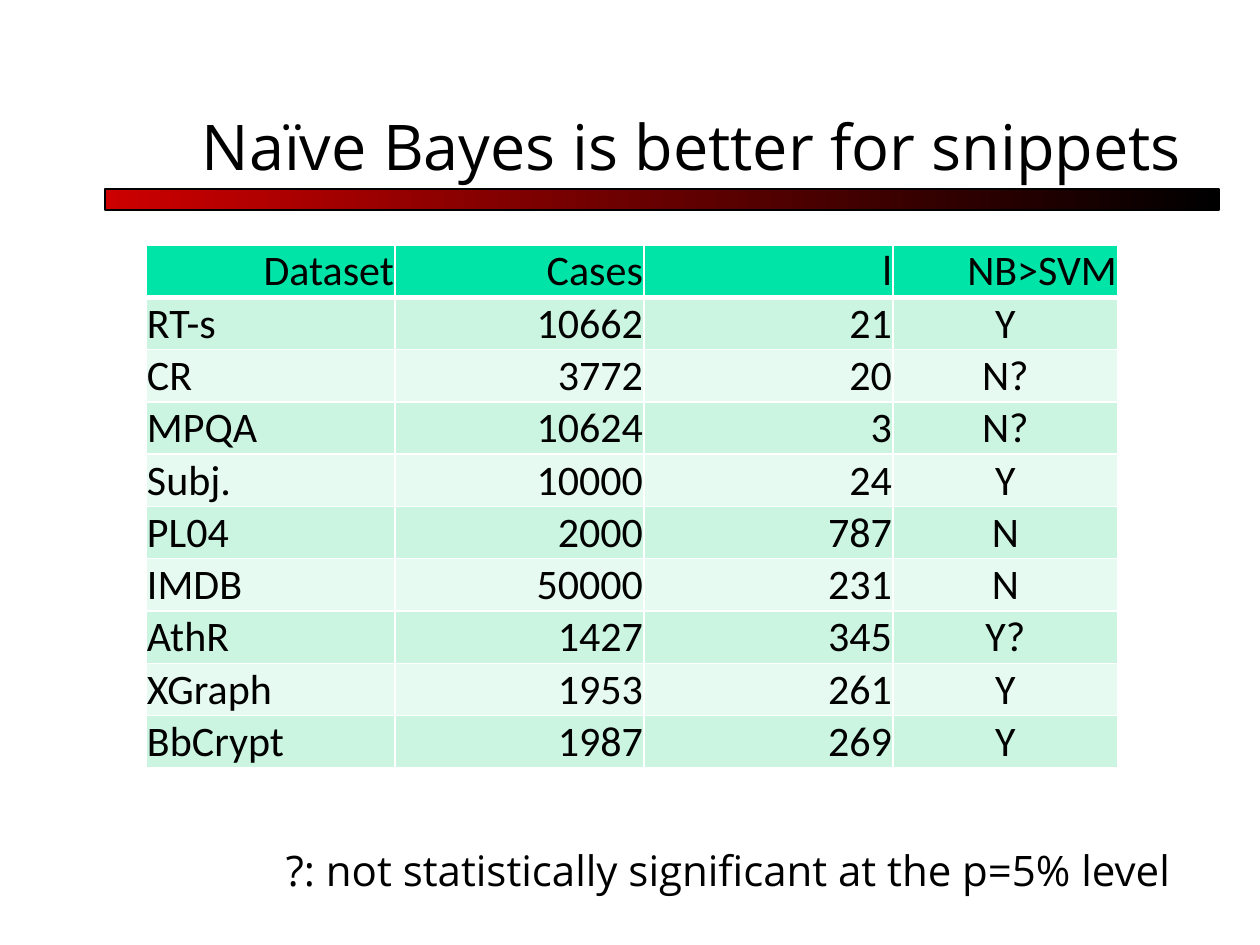
"""Build the slide comparing Naïve Bayes and SVM by dataset."""
from dataclasses import dataclass

from lxml.etree import SubElement
from pptx import Presentation
from pptx.dml.color import RGBColor
from pptx.enum.shapes import MSO_SHAPE
from pptx.enum.text import MSO_ANCHOR, MSO_AUTO_SIZE, PP_ALIGN
from pptx.oxml.ns import qn
from pptx.util import Emu, Pt

EMU_PER_PX = 914400 / 126
SLIDE_SIZE = (1260, 945)

HEADER = ("Dataset", "Cases", "l", "NB>SVM")
RESULTS = (
    ("RT-s", 10662, 21, "Y"),
    ("CR", 3772, 20, "N?"),
    ("MPQA", 10624, 3, "N?"),
    ("Subj.", 10000, 24, "Y"),
    ("PL04", 2000, 787, "N"),
    ("IMDB", 50000, 231, "N"),
    ("AthR", 1427, 345, "Y?"),
    ("XGraph", 1953, 261, "Y"),
    ("BbCrypt", 1987, 269, "Y"),
)
HEADER_ALIGNS = (PP_ALIGN.RIGHT,) * 4
RESULT_ALIGNS = (PP_ALIGN.LEFT, PP_ALIGN.RIGHT, PP_ALIGN.RIGHT, PP_ALIGN.CENTER)


@dataclass(frozen=True)
class Theme:
    ink: str = "000000"
    bar_start: str = "CC0000"
    header: str = "00E4A8"
    bands: tuple = ("CCF5E1", "E7FAF1")
    rule: str = "FFFFFF"
    rule_width: int = 1
    header_rule_width: int = 3
    title_size: int = 36
    body_size: int = 24
    heading_font: str = "Open Sans"
    table_font: str = "Calibri"


def px(length):
    return Emu(round(length * EMU_PER_PX))


def rgb(color):
    return RGBColor.from_string(color)


class SlideBuilder:
    def __init__(self, slide, theme):
        self.slide = slide
        self.theme = theme

    def set_text(self, frame, text, size, font, align):
        frame.text = text
        paragraph = frame.paragraphs[0]
        paragraph.alignment = align
        run_font = paragraph.runs[0].font
        run_font.size = Pt(size)
        run_font.name = font
        run_font.bold = False
        run_font.color.rgb = rgb(self.theme.ink)

    def bar(self, left, top, width, height):
        bar = self.slide.shapes.add_shape(
            MSO_SHAPE.RECTANGLE, px(left), px(top), px(width), px(height))
        bar.shadow.inherit = False
        bar.fill.gradient()
        bar.fill.gradient_angle = 0
        for stop, color in zip(bar.fill.gradient_stops, (self.theme.bar_start, self.theme.ink)):
            stop.color.rgb = rgb(color)
        bar.line.color.rgb = rgb(self.theme.ink)
        bar.line.width = Pt(0.75)

    def title(self, text, left, top, width, height):
        title = self.slide.shapes.title
        title.left, title.top, title.width, title.height = map(px, (left, top, width, height))
        frame = title.text_frame
        frame.auto_size = MSO_AUTO_SIZE.NONE
        frame.vertical_anchor = MSO_ANCHOR.BOTTOM
        self.set_text(frame, text, self.theme.title_size, self.theme.heading_font, PP_ALIGN.LEFT)

    def note(self, text, left, top, width, height):
        note = self.slide.shapes.add_textbox(px(left), px(top), px(width), px(height))
        frame = note.text_frame
        frame.word_wrap = False
        frame.auto_size = MSO_AUTO_SIZE.SHAPE_TO_FIT_TEXT
        self.set_text(frame, text, self.theme.body_size, self.theme.heading_font, PP_ALIGN.RIGHT)

    def borders(self, cell, top_width, bottom_width):
        side_width = self.theme.rule_width
        widths = {"L": side_width, "R": side_width, "T": top_width, "B": bottom_width}
        properties = cell._tc.get_or_add_tcPr()
        for side, width in widths.items():
            line = SubElement(properties, qn(f"a:ln{side}"), w=str(Pt(width)))
            fill = SubElement(line, qn("a:solidFill"))
            SubElement(fill, qn("a:srgbClr"), val=self.theme.rule)

    def cell(self, cell, text, align, color, top_width, bottom_width):
        cell.margin_left = cell.margin_top = cell.margin_right = px(1)
        cell.margin_bottom = 0
        cell.vertical_anchor = MSO_ANCHOR.BOTTOM
        self.borders(cell, top_width, bottom_width)
        cell.fill.solid()
        cell.fill.fore_color.rgb = rgb(color)
        self.set_text(cell.text_frame, text, self.theme.body_size, self.theme.table_font, align)

    def table(self, header, results, left, top, column_widths, row_height):
        theme = self.theme
        rows = (header, *results)
        table = self.slide.shapes.add_table(
            len(rows), len(header), px(left), px(top),
            px(sum(column_widths)), px(row_height * len(rows))).table
        table.horz_banding = False
        for column, width in zip(table.columns, column_widths):
            column.width = px(width)
        for index, values in enumerate(rows):
            table.rows[index].height = px(row_height)
            aligns = RESULT_ALIGNS if index else HEADER_ALIGNS
            color = theme.bands[(index - 1) % 2] if index else theme.header
            top_width = theme.header_rule_width if index == 1 else theme.rule_width
            bottom_width = theme.rule_width if index else theme.header_rule_width
            for column, (value, align) in enumerate(zip(values, aligns)):
                self.cell(table.cell(index, column), str(value), align, color,
                          top_width, bottom_width)


def main():
    presentation = Presentation()
    presentation.slide_width, presentation.slide_height = map(px, SLIDE_SIZE)
    slide = presentation.slides.add_slide(presentation.slide_layouts[5])
    builder = SlideBuilder(slide, Theme())
    builder.bar(105, 189, 1114, 21)
    builder.title("Naïve Bayes is better for snippets", 189, 53, 1071, 136)
    builder.table(HEADER, RESULTS, 146, 245, (249, 249, 249, 225), 52)
    builder.note("?: not statistically significant at the p=5% level", 210, 838, 973, 63)
    presentation.save("out.pptx")


if __name__ == "__main__":
    main()
